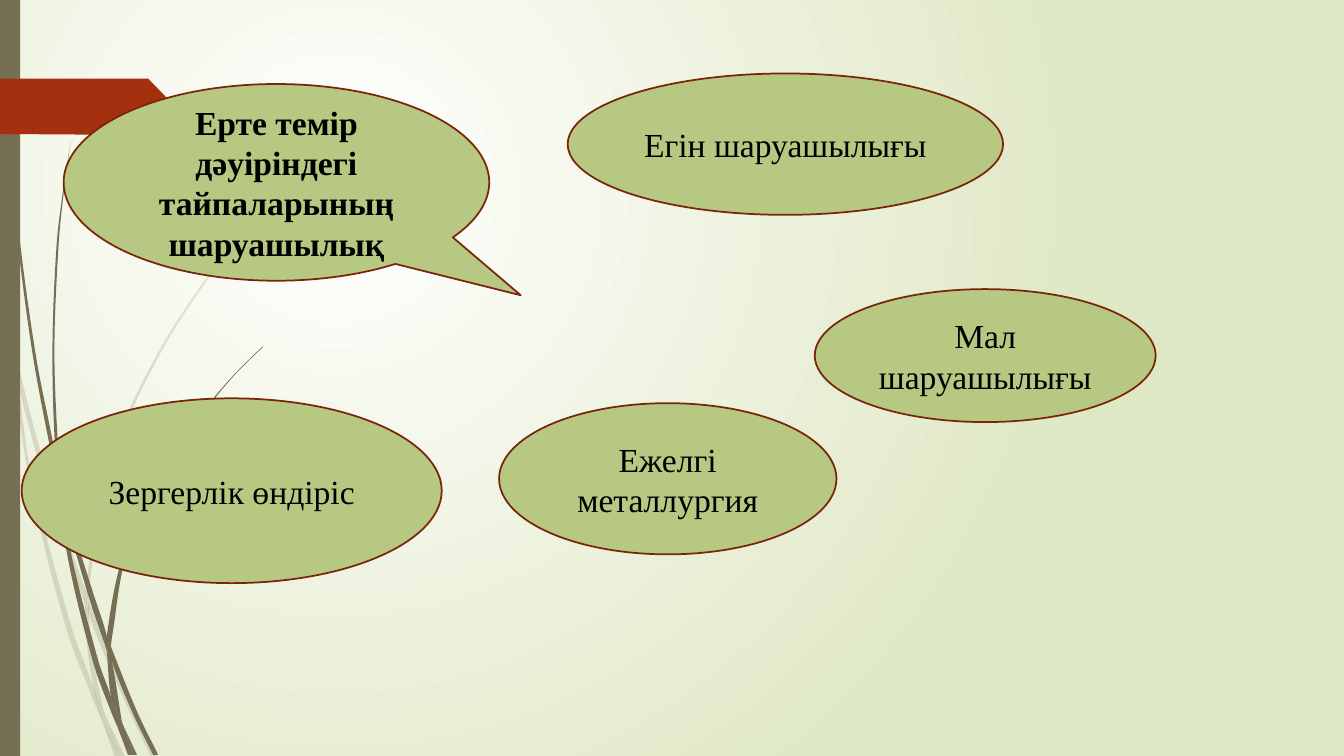
from math import dist
from lxml.etree import SubElement
from pptx import Presentation
from pptx.dml.color import RGBColor
from pptx.enum.shapes import MSO_SHAPE
from pptx.enum.text import MSO_ANCHOR, PP_ALIGN
from pptx.oxml.ns import qn
from pptx.util import Pt

WHITE = RGBColor(0xFF, 0xFF, 0xFF)
PALE = RGBColor(0xDF, 0xE8, 0xC4)
OLIVE = RGBColor(0x76, 0x6F, 0x54)
RED = RGBColor(0xA5, 0x30, 0x10)
GREEN = RGBColor(0xB6, 0xC8, 0x82)
BROWN = RGBColor(0x7A, 0x24, 0x0C)
BLACK = RGBColor(0, 0, 0)
FONT = "Times New Roman"
WIDE, HIGH = 960, 540

# text, left, top, width, height
TOPIC = ("Ерте темір дәуіріндегі тайпаларының шаруашылық", 45.5, 60, 304, 140.5)
TRADES = [
    ("Егін шаруашылығы", 405.5, 52.5, 311, 101),
    ("Мал шаруашылығы", 582, 206.5, 243.5, 95),
    ("Зергерлік өндіріс", 15.5, 284.5, 300, 132),
    ("Ежелгі металлургия", 356.5, 288, 241, 108),
]

# Grass and flag are plotted on a grid of 0.72 points.
GRID = 0.72
FLAG = [(0, 78), (147, 78), (174, 106), (147, 134), (0, 133)]
# Each blade has a left and a right edge, both from top to bottom.
FAINT = [
    ([(0, 299), (10, 344), (11, 350)], [(0, 282), (9, 322), (11, 350)]),
    ([(14, 345), (17, 376), (36, 450), (58, 522), (84, 599)],
     [(14, 345), (36, 433), (62, 520), (85, 586)]),
    ([(88, 596), (88, 610), (123, 694), (150, 751)],
     [(88, 596), (92, 607), (127, 692), (155, 751)]),
    ([(105, 711), (119, 751)], [(105, 711), (124, 751)]),
    ([(11, 350), (28, 470), (65, 621), (92, 693), (101, 714)],
     [(11, 350), (17, 376), (31, 469), (70, 619), (93, 683), (101, 714)]),
    ([(84, 599), (87, 646), (93, 683), (96, 692), (105, 711)],
     [(84, 599), (88, 610), (91, 646), (103, 706), (105, 711)]),
    ([(312, 153), (268, 197), (228, 244), (158, 348), (107, 461),
      (85, 584), (88, 596)],
     [(312, 154), (268, 198), (229, 245), (160, 349), (110, 462),
      (88, 584), (88, 596)]),
    ([(101, 714), (114, 751)], [(101, 714), (119, 751)]),
    ([(85, 586), (84, 599), (88, 610)], [(85, 586), (88, 596), (88, 610)]),
    ([(93, 683), (101, 714), (119, 751)],
     [(93, 683), (96, 692), (105, 711), (119, 751)]),
]
SOLID = [
    ([(3, 0), (4, 48), (7, 110), (17, 233), (33, 355), (57, 481)],
     [(4, 0), (5, 48), (8, 109), (19, 232), (36, 355), (55, 453), (57, 481)]),
    ([(60, 472), (64, 505), (88, 592), (106, 645)],
     [(60, 472), (75, 532), (93, 590), (106, 631), (106, 645)]),
    ([(110, 641), (111, 656), (132, 708), (152, 749)],
     [(110, 641), (113, 649), (136, 706), (157, 749)]),
    ([(57, 477), (68, 557), (93, 659), (111, 708), (117, 722)],
     [(57, 477), (64, 505), (72, 556), (98, 657), (110, 691), (117, 722)]),
    ([(70, 141), (62, 193), (56, 245), (52, 349), (55, 449), (60, 472)],
     [(70, 141), (63, 193), (58, 245), (54, 349), (58, 453), (60, 472)]),
    ([(122, 719), (133, 749)], [(122, 719), (136, 749)]),
    ([(55, 449), (57, 477), (64, 505)], [(55, 449), (60, 472), (64, 505)]),
    ([(260, 344), (231, 373), (204, 405), (156, 474), (122, 551),
      (106, 631), (110, 641)],
     [(261, 344), (231, 374), (205, 406), (158, 476), (125, 552),
      (111, 633), (110, 641)]),
    ([(117, 722), (127, 749)], [(117, 722), (131, 749)]),
    ([(106, 645), (110, 691), (116, 706), (122, 719)],
     [(106, 645), (111, 656), (121, 716), (122, 719)]),
    ([(106, 631), (106, 645), (111, 656)],
     [(106, 631), (110, 641), (111, 656)]),
    ([(110, 691), (117, 722), (130, 749)],
     [(110, 691), (116, 706), (122, 719), (133, 749)]),
]


def bend(knots):
    """Give the Bezier points, three to a step, of a curve through knots."""
    ends = [knots[0], *knots, knots[-1]]
    curve = []
    for a, b, c, d in zip(ends, ends[1:], ends[2:], ends[3:]):
        step = dist(b, c)
        out = step / (dist(a, b) + step) / 3
        back = step / (step + dist(c, d)) / 3
        curve += [tuple(q + (r - p) * out for p, q, r in zip(a, b, c)),
                  tuple(r - (s - q) * back for q, r, s in zip(b, c, d)), c]
    return curve


def paint(shape, color):
    shape.shadow.inherit = False
    shape.fill.solid()
    shape.fill.fore_color.rgb = color
    shape.line.fill.background()
    return shape


def draw_form(shapes, points, color):
    spots = [(Pt(x * GRID), Pt(y * GRID)) for x, y in points]
    pen = shapes.build_freeform(*spots[0])
    pen.add_line_segments(spots[1:], close=True)
    return paint(pen.convert_to_shape(), color)


def draw_blade(shapes, left, right, faint):
    up = right[::-1]
    join = [left[-1], up[0], up[0]] if left[-1] != up[0] else []
    points = [left[0], *bend(left), *join, *bend(up)]
    blade = draw_form(shapes, points, OLIVE)
    lines = list(blade.element.iter(qn("a:lnTo")))
    for n in range(0, len(points) - 1, 3):
        first, *rest = lines[n:n + 3]
        first.tag = qn("a:cubicBezTo")
        for line in rest:
            first.append(line[0])
            line.getparent().remove(line)
    if faint:
        tint = blade.element.find(".//" + qn("a:srgbClr"))
        SubElement(tint, qn("a:alpha"), val="20000")


def add_bubble(shapes, kind, item, bold=False):
    text, *box = item
    bubble = paint(shapes.add_shape(kind, *map(Pt, box)), GREEN)
    bubble.line.color.rgb = BROWN
    bubble.line.width = Pt(1.25)
    frame = bubble.text_frame
    frame.word_wrap = True
    frame.vertical_anchor = MSO_ANCHOR.MIDDLE
    frame.text = text
    para = frame.paragraphs[0]
    para.alignment = PP_ALIGN.CENTER
    font = para.runs[0].font
    font.name, font.size, font.bold = FONT, Pt(24), bold
    font.color.rgb = BLACK
    return bubble


def set_glow(slide):
    """Fill the background with a round gradient."""
    fill = slide.background.fill
    fill.gradient()
    for stop, color in zip(fill.gradient_stops, (WHITE, PALE)):
        stop.color.rgb = color
    line = slide.element.find(".//" + qn("a:lin"))
    grad = line.getparent()
    grad.remove(line)
    glow = SubElement(grad, qn("a:path"), {"path": "circle"})
    SubElement(glow, qn("a:fillToRect"),
               l="50000", t="50000", r="100000", b="100000")


def main():
    deck = Presentation()
    deck.slide_width, deck.slide_height = Pt(WIDE), Pt(HIGH)
    slide = deck.slides.add_slide(deck.slide_layouts[6])
    shapes = slide.shapes
    set_glow(slide)
    for blades, faint in ((FAINT, True), (SOLID, False)):
        tuft = shapes.add_group_shape()
        for left, right in blades:
            draw_blade(tuft.shapes, left, right, faint)
    bar = shapes.add_shape(MSO_SHAPE.RECTANGLE, 0, 0, Pt(14.4), Pt(HIGH))
    paint(bar, OLIVE)
    draw_form(shapes, FLAG, RED)
    topic = add_bubble(shapes, MSO_SHAPE.OVAL_CALLOUT, TOPIC, bold=True)
    topic.adjustments[0] = topic.adjustments[1] = 0.574
    for trade in TRADES:
        add_bubble(shapes, MSO_SHAPE.OVAL, trade)
    deck.save("out.pptx")


if __name__ == "__main__":
    main()
